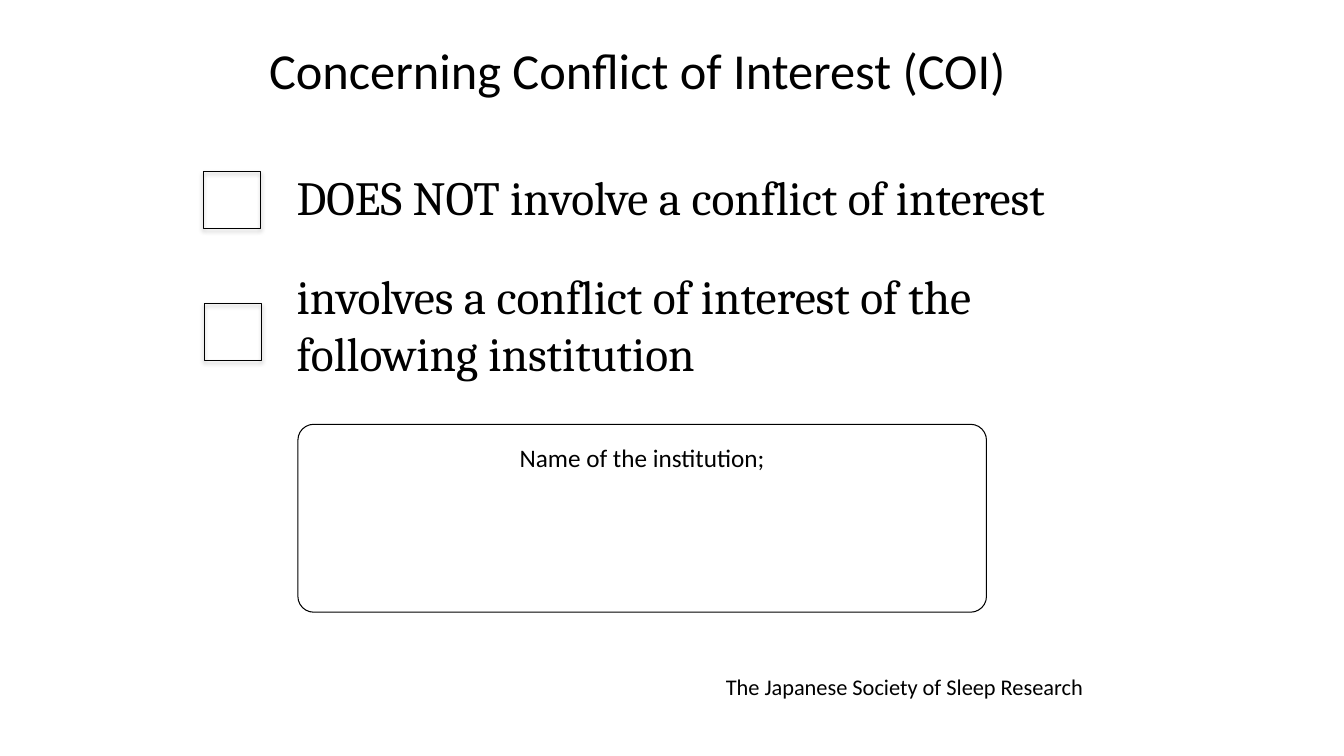
from lxml import etree
from pptx import Presentation
from pptx.dml.color import RGBColor
from pptx.enum.shapes import MSO_SHAPE
from pptx.enum.text import PP_ALIGN, MSO_ANCHOR
from pptx.oxml.ns import qn
from pptx.util import Inches, Pt

BLACK = RGBColor(0, 0, 0)
LEFT, CENTER = PP_ALIGN.LEFT, PP_ALIGN.CENTER
TOP = MSO_ANCHOR.TOP
RECTANGLE, ROUNDED = MSO_SHAPE.RECTANGLE, MSO_SHAPE.ROUNDED_RECTANGLE

deck = Presentation()
deck.slide_width, deck.slide_height = Inches(13.33), Inches(7.5)
page = deck.slides.add_slide(deck.slide_layouts[6])

# All places are in hundredths of the slide's width and height
COLUMN, ROW = deck.slide_width / 100, deck.slide_height / 100


def add_outline(kind, left, top, width, height):
    shape = page.shapes.add_shape(
        kind, int(left * COLUMN), int(top * ROW), int(width * COLUMN), int(height * ROW))
    shape.shadow.inherit = False
    shape.fill.background()
    shape.line.color.rgb = BLACK
    shape.line.width = Pt(0.75)
    return shape


def write(box, text, alignment, **font_values):
    frame = box.text_frame
    frame.word_wrap = True
    frame.vertical_anchor = TOP
    para = frame.paragraphs[0]
    para.alignment = alignment
    span = para.add_run()
    span.text = text
    span.font.color.rgb = BLACK
    for name, value in font_values.items():
        setattr(span.font, name, value)
    return para


HEADING = {"name": "Calibri", "size": Pt(36)}
CHOICE = {"name": "Cambria", "size": Pt(34)}
SOCIETY = {"name": "Calibri", "size": Pt(16)}
INSTITUTION = {"name": "Calibri", "size": Pt(18)}

texts = [
    ("Concerning Conflict of Interest (COI)",
     (15.42, 4.53, 64.05, 9.87), CENTER, HEADING, 1),
    ("DOES NOT involve a conflict of interest",
     (21.34, 21.55, 66.15, 9.87), LEFT, CHOICE, 1),
    ("involves a conflict of interest of the following institution",
     (21.34, 34.67, 57.08, 9.73), LEFT, CHOICE, 1),
    ("The Japanese Society of Sleep Research",
     (52.93, 88.75, 28.73, 5.47), CENTER, SOCIETY, 0.9),
]
for text, (left, top, width, height), alignment, font_values, spacing in texts:
    box = page.shapes.add_textbox(
        int(left * COLUMN), int(top * ROW), int(width * COLUMN), int(height * ROW))
    write(box, text, alignment, **font_values).line_spacing = spacing

# Checkboxes with a soft shadow below
for left, top in [(15.15, 22.67), (15.23, 40.13)]:
    checkbox = add_outline(RECTANGLE, left, top, 4.25, 7.55)
    effects = checkbox.element.spPr.find(qn("a:effectLst"))
    shadow = etree.SubElement(
        effects, qn("a:outerShdw"), blurRad=str(Pt(3.1)), dist=str(Pt(1.8)),
        dir="5400000", rotWithShape="0")
    shade = etree.SubElement(shadow, qn("a:srgbClr"), val=str(BLACK))
    etree.SubElement(shade, qn("a:alpha"), val="35000")

institution = add_outline(ROUNDED, 22.17, 56.13, 51.23, 24.85)
institution.adjustments[0] = 0.084
institution.text_frame.margin_top = Inches(0.13)
write(institution, "Name of the institution;", CENTER, **INSTITUTION)

deck.save("out.pptx")
